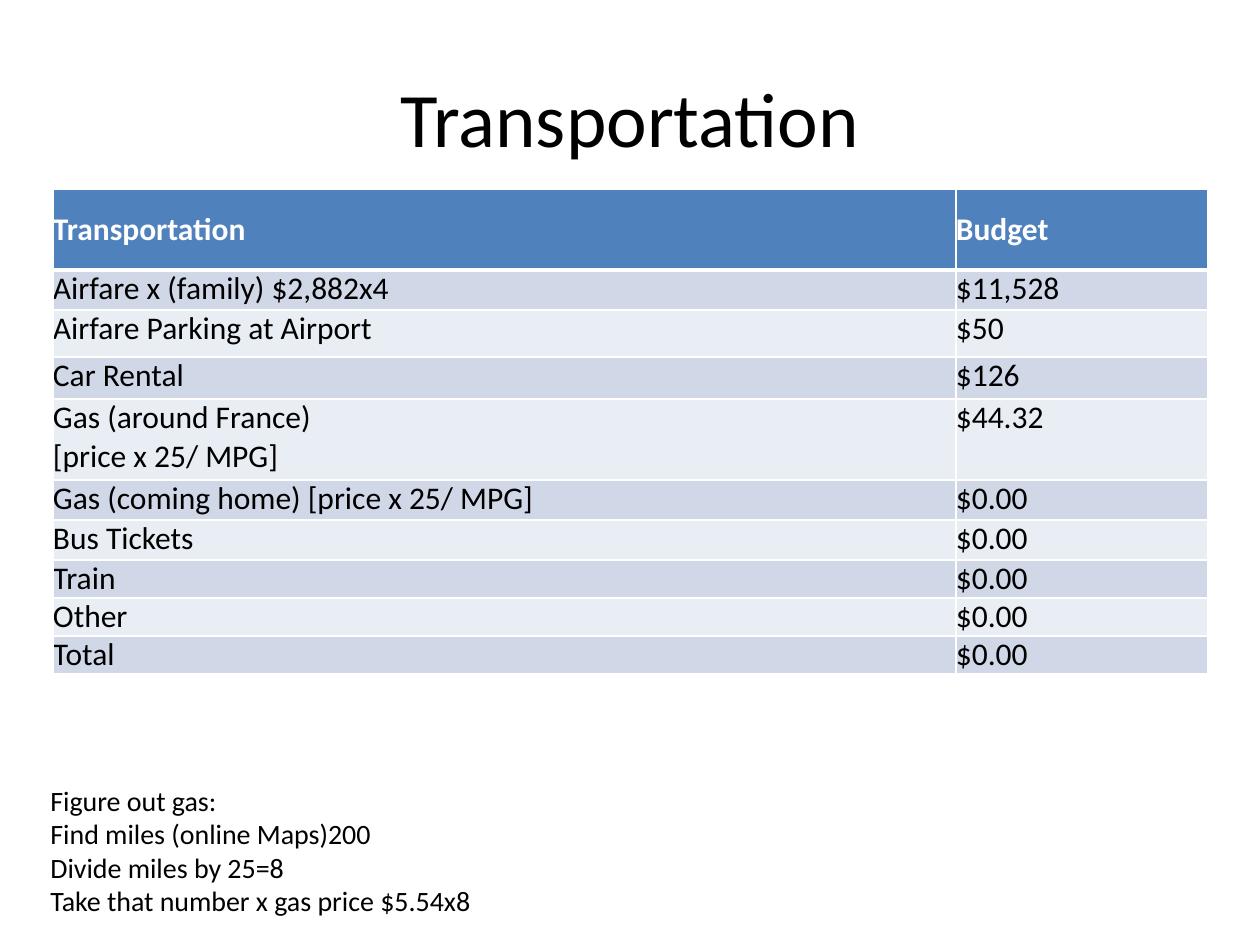
from pptx import Presentation
from pptx.dml.color import RGBColor as Rgb
from pptx.enum.text import MSO_ANCHOR as Anchor, PP_ALIGN as Align
from pptx.util import Pt
from lxml.etree import SubElement as Sub
from pptx.oxml.ns import qn

PX = 914400 // 126
HUES = {"ink": "000000", "white": "FFFFFF", "head": "4F81BD", "odd": "D0D8E8", "even": "E9EDF4"}


def style(frame, size, hue, bold=False):
    for para in frame.paragraphs:
        for run in para.runs:
            run.font.name = "Calibri"
            run.font.size = Pt(size)
            run.font.bold = bold
            run.font.color.rgb = Rgb.from_string(HUES[hue])


def edge(cell, side, width):
    line = Sub(cell._tc.get_or_add_tcPr(), qn(f"a:ln{side}"), w=str(Pt(width)))
    Sub(Sub(line, qn("a:solidFill")), qn("a:srgbClr"), val=HUES["white"])


prs = Presentation()
prs.slide_width = 1260 * PX
prs.slide_height = 945 * PX
slide = prs.slides.add_slide(prs.slide_layouts[6])

title = slide.shapes.add_textbox(63 * PX, 38 * PX, 1134 * PX, 157 * PX).text_frame
title.word_wrap = True
title.vertical_anchor = Anchor.MIDDLE
title.text = "Transportation"
title.paragraphs[0].alignment = Align.CENTER
style(title, 44, "ink")

rows = [
    ("Transportation", "Budget", 81),
    ("Airfare x (family) $2,882x4", "$11,528", 40),
    ("Airfare Parking at Airport", "$50", 47),
    ("Car Rental", "$126", 42),
    ("Gas (around France)\n[price x 25/ MPG]", "$44.32", 81),
    ("Gas (coming home) [price x 25/ MPG]", "$0.00", 40),
    ("Bus Tickets", "$0.00", 40),
    ("Train", "$0.00", 38),
    ("Other", "$0.00", 38),
    ("Total", "$0.00", 38),
]
high = sum(row[2] for row in rows)
table = slide.shapes.add_table(len(rows), 2, 53 * PX, 189 * PX, 1155 * PX, high * PX).table
table.columns[0].width = 903 * PX
table.columns[1].width = 252 * PX

for r, (item, cost, tall) in enumerate(rows):
    table.rows[r].height = tall * PX
    for c, text in enumerate((item, cost)):
        cell = table.cell(r, c)
        cell.margin_left = cell.margin_right = cell.margin_top = cell.margin_bottom = 0
        cell.vertical_anchor = Anchor.TOP if r else Anchor.MIDDLE
        cell.text_frame.text = text
        style(cell.text_frame, 18, "ink" if r else "white", r == 0)
        for side in "LRTB":
            thick = (r, side) in ((0, "B"), (1, "T"))
            edge(cell, side, 3 if thick else 1)
        cell.fill.solid()
        tone = "head" if r == 0 else "odd" if r % 2 else "even"
        cell.fill.fore_color.rgb = Rgb.from_string(HUES[tone])

note = slide.shapes.add_textbox(38 * PX, 777 * PX, 451 * PX, 149 * PX).text_frame
note.word_wrap = False
note.text = "\n".join([
    "Figure out gas:",
    "Find miles (online Maps)200",
    "Divide miles by 25=8",
    "Take that number x gas price $5.54x8",
])
style(note, 16, "ink")

prs.save("out.pptx")
